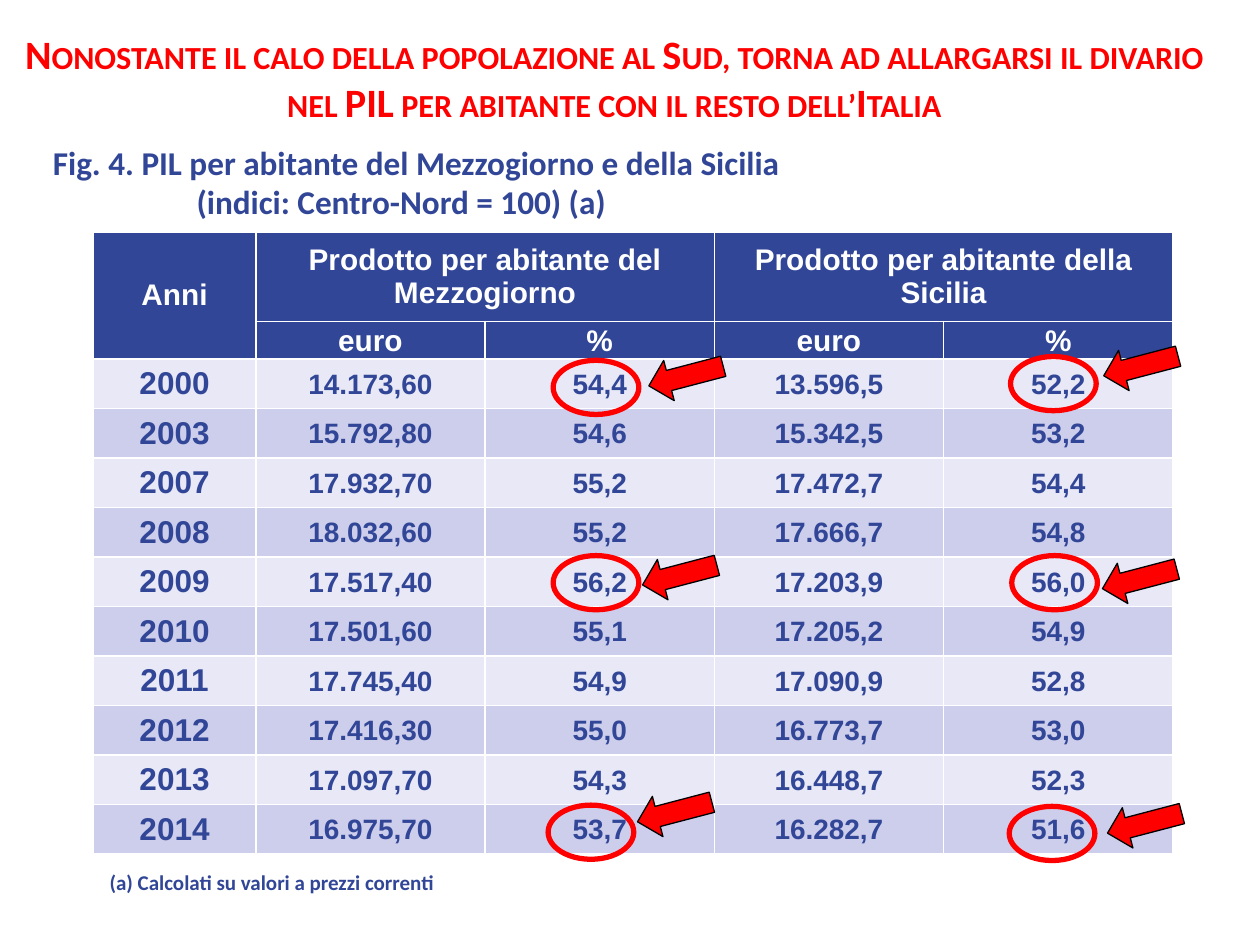
import pptx
import pptx.util
import pptx.dml.color
import pptx.enum.text
import pptx.enum.shapes
import pptx.oxml
import pptx.oxml.ns
import lxml.etree

Inches, Pt = pptx.util.Inches, pptx.util.Pt
CENTER = pptx.enum.text.PP_ALIGN.CENTER
SHAPES = pptx.enum.shapes.MSO_SHAPE
BLUE, RED, WHITE = "314697", "FF0000", "FFFFFF"
BANDS = ["E8E8F6", "CDCDEC"]


def color(value):
    return pptx.dml.color.RGBColor.from_string(value)


def add_run(paragraph, text, size, font, value):
    run = paragraph.add_run()
    run.text = text
    run.font.size = Pt(size)
    run.font.name = font
    run.font.bold = True
    run.font.color.rgb = color(value)
    return run


presentation = pptx.Presentation()
presentation.slide_width, presentation.slide_height = Inches(10), Inches(7.5)
slide = presentation.slides.add_slide(presentation.slide_layouts[6])

texts = [
    (0.33, 1.11, 9.42, 0.71, 19, BLUE, True,
     ["Fig. 4. PIL per abitante del Mezzogiorno e della Sicilia",
      "(indici: Centro-Nord = 100) (a)"]),
    (0.78, 6.86, 2.79, 0.29, 12, BLUE, False,
     ["(a) Calcolati su valori a prezzi correnti"]),
    (0, 0.19, 9.75, 0.89, 23, RED, True,
     ["Nonostante il calo della popolazione al Sud, torna ad allargarsi il divario "
      "nel PIL per abitante con il resto dell\u2019Italia"]),
]
frames = []
for left, top, width, height, size, value, wrap, lines in texts:
    box = slide.shapes.add_textbox(Inches(left), Inches(top), Inches(width), Inches(height))
    frame = box.text_frame
    frame.word_wrap = wrap
    frame.margin_left = frame.margin_right = Inches(0.09)
    frame.margin_top = frame.margin_bottom = Inches(0.04)
    for index, line in enumerate(lines):
        paragraph = frame.add_paragraph() if index else frame.paragraphs[0]
        add_run(paragraph, line, size, "Calibri", value)
    frames.append(frame)

caption, note, title = frames
for paragraph in caption.paragraphs:
    paragraph.line_spacing = 0.97
caption.paragraphs[1]._p.get_or_add_pPr().set("marL", str(Inches(1.14)))
title.paragraphs[0].alignment = CENTER
title.paragraphs[0].runs[0].font._element.set("cap", "small")

rows = [
    ["Anni", "Prodotto per abitante del Mezzogiorno", "", "Prodotto per abitante della Sicilia", ""],
    ["", "euro", "%", "euro", "%"],
    ["2000", "14.173,60", "54,4", "13.596,5", "52,2"],
    ["2003", "15.792,80", "54,6", "15.342,5", "53,2"],
    ["2007", "17.932,70", "55,2", "17.472,7", "54,4"],
    ["2008", "18.032,60", "55,2", "17.666,7", "54,8"],
    ["2009", "17.517,40", "56,2", "17.203,9", "56,0"],
    ["2010", "17.501,60", "55,1", "17.205,2", "54,9"],
    ["2011", "17.745,40", "54,9", "17.090,9", "52,8"],
    ["2012", "17.416,30", "55,0", "16.773,7", "53,0"],
    ["2013", "17.097,70", "54,3", "16.448,7", "52,3"],
    ["2014", "16.975,70", "53,7", "16.282,7", "51,6"],
]
table = slide.shapes.add_table(12, 5, Inches(0.74), Inches(1.84), Inches(8.56), Inches(4.94)).table
table.first_row = table.horz_banding = False
for index, column in enumerate(table.columns):
    column.width = Inches(1.82 if index else 1.29)
header_heights = [0.71, 0.3]
body_height = (4.94 - sum(header_heights)) / 10
for row, height in zip(table.rows, header_heights + [body_height] * 10):
    row.height = Inches(height)

for row_index, values in enumerate(rows):
    for column_index, text in enumerate(values):
        cell = table.cell(row_index, column_index)
        header = row_index < 2
        wide = row_index == 0 or column_index == 0
        cell.margin_left = cell.margin_right = Inches(0.04 if wide else 0.01)
        cell.margin_top = Inches(0 if wide else 0.01)
        cell.margin_bottom = 0
        cell.vertical_anchor = pptx.enum.text.MSO_ANCHOR.MIDDLE
        properties = cell._tc.get_or_add_tcPr()
        for side in ("lnL", "lnR", "lnT", "lnB"):
            border = lxml.etree.SubElement(properties, pptx.oxml.ns.qn("a:" + side), w=str(Pt(1)))
            solid = lxml.etree.SubElement(border, pptx.oxml.ns.qn("a:solidFill"))
            lxml.etree.SubElement(solid, pptx.oxml.ns.qn("a:srgbClr"), val=WHITE)
        cell.fill.solid()
        cell.fill.fore_color.rgb = color(BLUE if header else BANDS[row_index % 2])
        if text:
            paragraph = cell.text_frame.paragraphs[0]
            paragraph.alignment = CENTER
            size = 17 if header else 16 if column_index else 18
            add_run(paragraph, text, size, "Arial", WHITE if header else BLUE)

for first, last in [((0, 0), (1, 0)), ((0, 1), (0, 2)), ((0, 3), (0, 4))]:
    table.cell(*first).merge(table.cell(*last))

rings = [(4.39, 2.86), (4.39, 4.41), (4.35, 6.39), (8.01, 6.4), (8.03, 4.41), (8.02, 2.83)]
arrows = [(8.92, 6.23), (8.88, 4.29), (8.89, 2.6), (5.19, 6.14), (5.23, 4.26), (5.28, 2.68)]
for left, top in rings:
    ring = slide.shapes.add_shape(SHAPES.OVAL, Inches(left), Inches(top), Inches(0.68), Inches(0.43))
    ring.shadow.inherit = False
    ring.fill.background()
    ring.line.color.rgb = color(RED)
    ring.line.width = Pt(3)
for left, top in arrows:
    arrow = slide.shapes.add_shape(SHAPES.DOWN_ARROW, Inches(left), Inches(top), Inches(0.33), Inches(0.61))
    arrow.shadow.inherit = False
    arrow.rotation = 75.3
    arrow.fill.solid()
    arrow.fill.fore_color.rgb = color(RED)
    arrow.line.color.rgb = color("000000")
    arrow.line.width = Pt(0.75)

presentation.save("out.pptx")
